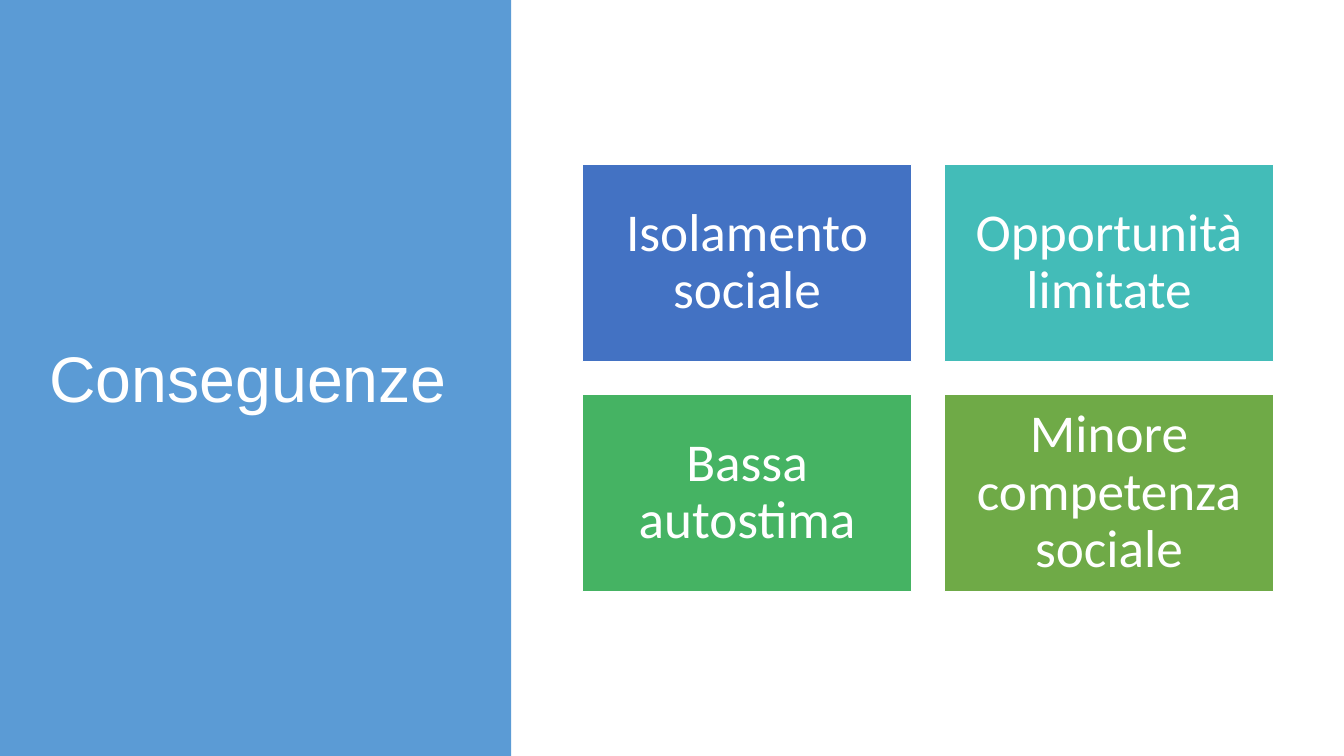
"""Build the slide "Conseguenze": a title panel beside a grid of four consequences."""
from pptx import Presentation
from pptx.dml.color import RGBColor
from pptx.enum.shapes import MSO_SHAPE
from pptx.enum.text import MSO_ANCHOR, PP_ALIGN
from pptx.util import Inches, Pt

WHITE = RGBColor(0xFF, 0xFF, 0xFF)
PANEL_BLUE = RGBColor(0x5B, 0x9B, 0xD5)
BLUE = RGBColor(0x43, 0x72, 0xC3)
TEAL = RGBColor(0x43, 0xBC, 0xB8)
GREEN = RGBColor(0x45, 0xB3, 0x63)
OLIVE = RGBColor(0x6F, 0xAA, 0x47)

CONSEQUENCES = [
    ("Isolamento sociale", BLUE),
    ("Opportunità limitate", TEAL),
    ("Bassa autostima", GREEN),
    ("Minore competenza sociale", OLIVE),
]
COLUMNS = 2
GRID_LEFT, GRID_TOP = 5.78, 1.63
CARD_WIDTH, CARD_HEIGHT = 3.26, 1.96
COLUMN_GAP, ROW_GAP = 0.33, 0.32


def write_text(shape, text, font, size, align, margin_x, margin_y):
    frame = shape.text_frame
    frame.word_wrap = True
    frame.vertical_anchor = MSO_ANCHOR.MIDDLE
    frame.margin_left = frame.margin_right = Inches(margin_x)
    frame.margin_top = frame.margin_bottom = Inches(margin_y)
    para = frame.paragraphs[0]
    para.alignment = align
    para.line_spacing = 0.9
    span = para.add_run()
    span.text = text
    span.font.name = font
    span.font.size = Pt(size)
    span.font.color.rgb = WHITE


deck = Presentation()
deck.slide_width, deck.slide_height = Inches(13.33), Inches(7.5)
page = deck.slides.add_slide(deck.slide_layouts[5])

title = page.shapes.title
title.left, title.top = Inches(0.39), Inches(0.78)
title.width, title.height = Inches(4.32), Inches(6.02)
write_text(title, "Conseguenze", font="Arial", size=46,
           align=PP_ALIGN.LEFT, margin_x=0.1, margin_y=0.05)

panel = page.shapes.add_shape(
    MSO_SHAPE.RECTANGLE, 0, 0, Inches(5.07), deck.slide_height)
panel.shadow.inherit = False
panel.fill.solid()
panel.fill.fore_color.rgb = PANEL_BLUE
panel.line.fill.background()
title.element.addprevious(panel.element)

for index, (text, color) in enumerate(CONSEQUENCES):
    row, column = divmod(index, COLUMNS)
    card = page.shapes.add_shape(
        MSO_SHAPE.RECTANGLE,
        Inches(GRID_LEFT + column * (CARD_WIDTH + COLUMN_GAP)),
        Inches(GRID_TOP + row * (CARD_HEIGHT + ROW_GAP)),
        Inches(CARD_WIDTH), Inches(CARD_HEIGHT))
    card.shadow.inherit = False
    card.fill.solid()
    card.fill.fore_color.rgb = color
    card.line.color.rgb = WHITE
    card.line.width = Pt(1)
    write_text(card, text, font="Calibri", size=38,
               align=PP_ALIGN.CENTER, margin_x=0.16, margin_y=0.16)

deck.save("out.pptx")
